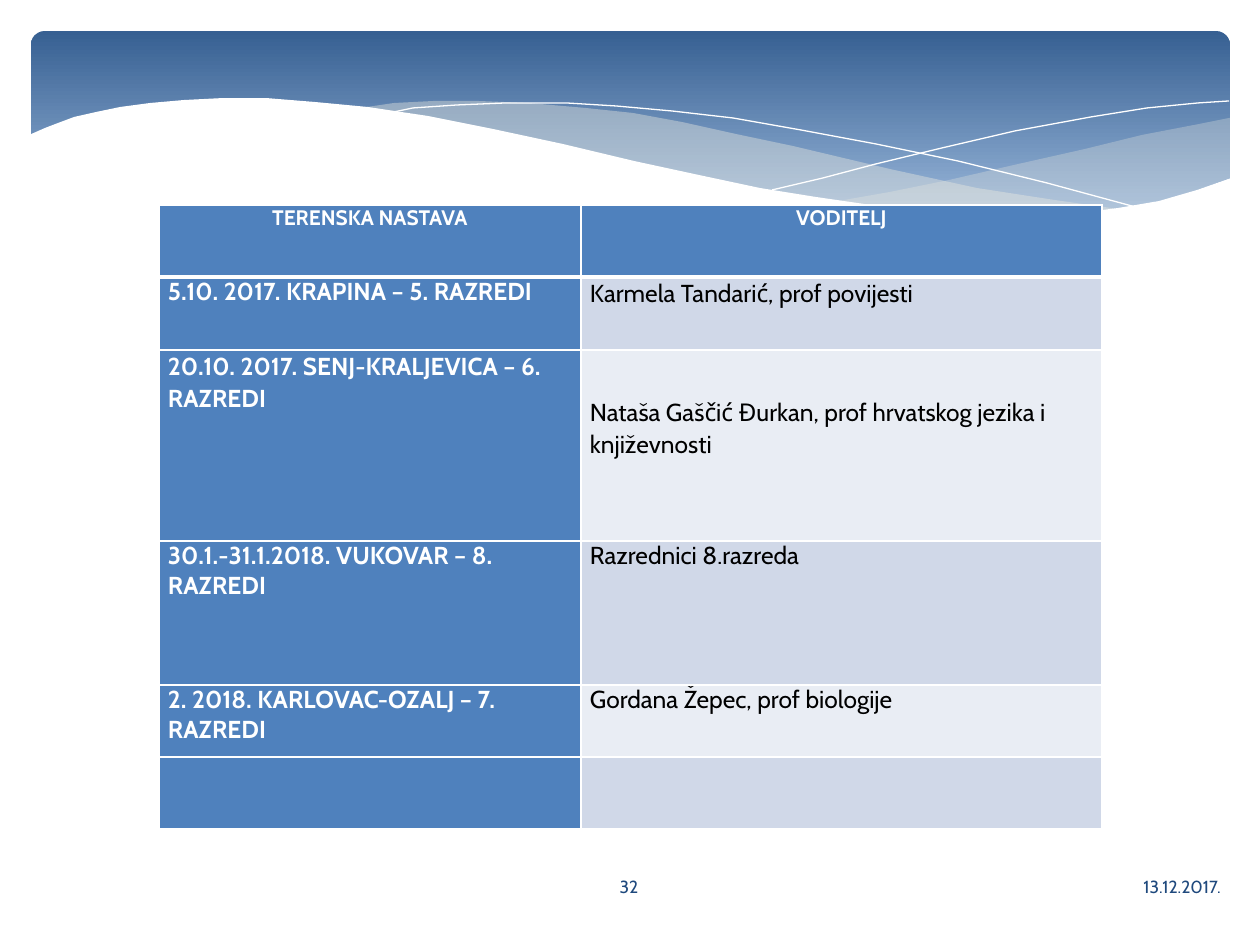
import pptx
import pptx.util
import pptx.dml.color
import pptx.enum.shapes
import pptx.enum.text
import pptx.oxml
import pptx.oxml.ns
import lxml.etree

PX = 914400 / 126
ALIGN = pptx.enum.text.PP_ALIGN
COLORS = {
    "banner_top": "376092", "banner_bottom": "95B3D7", "veil": "EEECE1",
    "white": "FFFFFF", "footer": "1F497D", "blue": "4F81BD",
    "band_dark": "D0D8E8", "band_light": "E9EDF4", "black": "000000",
}


def px(n):
    return pptx.util.Emu(round(n * PX))


def rgb(name):
    return pptx.dml.color.RGBColor.from_string(COLORS[name])


prs = pptx.Presentation()
prs.slide_width, prs.slide_height = px(1260), px(945)
s = prs.slides.add_slide(prs.slide_layouts[6])

banner = s.shapes.add_shape(
    pptx.enum.shapes.MSO_SHAPE.ROUNDED_RECTANGLE, px(31), px(31), px(1199), px(197))
banner.adjustments[0] = 0.07
banner.shadow.inherit = False
banner.line.fill.background()
banner.fill.gradient()
banner.fill.gradient_angle = 270
for stop, name, position in zip(
        banner.fill.gradient_stops, ("banner_top", "banner_bottom"), (0, 0.9)):
    stop.color.rgb = rgb(name)
    stop.position = position

right_veil = [
    (1229, 118), (1194, 125), (1142, 135), (1085, 149), (1014, 165), (949, 180),
    (890, 192), (833, 202), (888, 208), (939, 213), (998, 217), (1052, 217),
    (1099, 213), (1140, 205), (1178, 197), (1230, 178), (1230, 118)]
center_veil = [
    (1125, 210), (1055, 200), (977, 188), (890, 169), (793, 146), (736, 134),
    (682, 122), (633, 113), (586, 108), (529, 103), (479, 101), (433, 101),
    (394, 103), (360, 108), (407, 113), (456, 122), (509, 134), (566, 146),
    (668, 170), (736, 184), (799, 197), (857, 205), (910, 212), (974, 217),
    (1031, 218), (1080, 215)]
falling_line = [
    (389, 113), (413, 108), (457, 105), (505, 103), (567, 103), (616, 106),
    (672, 111), (733, 118), (801, 130), (876, 144), (958, 161), (1047, 183),
    (1143, 209)]
rising_line = [
    (772, 190), (823, 178), (876, 164), (942, 148), (1015, 131), (1091, 117),
    (1147, 108), (1198, 103), (1229, 101)]
white_wave = [
    (1231, 178), (1197, 190), (1159, 201), (1118, 208), (1071, 214), (1019, 215),
    (959, 214), (892, 208), (816, 197), (760, 188), (699, 175), (634, 161),
    (563, 144), (493, 129), (428, 116), (368, 107), (315, 102), (266, 98),
    (223, 98), (184, 100), (150, 103), (120, 107), (96, 112), (74, 117),
    (58, 123), (45, 128), (29, 135), (29, 282), (1231, 282)]

for points, fill, alpha in (
        (right_veil, "veil", 29), (center_veil, "veil", 40),
        (falling_line, None, None), (rising_line, None, None),
        (white_wave, "white", 100)):
    fb = s.shapes.build_freeform(*points[0], scale=PX)
    fb.add_line_segments(points[1:], close=fill is not None)
    sp = fb.convert_to_shape()
    sp.shadow.inherit = False
    if fill:
        sp.line.fill.background()
        sp.fill.solid()
        sp.fill.fore_color.rgb = rgb(fill)
        color = sp.fill._xPr.find(".//" + pptx.oxml.ns.qn("a:srgbClr"))
        lxml.etree.SubElement(color, pptx.oxml.ns.qn("a:alpha"), val=str(alpha * 1000))
    else:
        sp.fill.background()
        sp.line.color.rgb = rgb("white")
        sp.line.width = pptx.util.Pt(0)

for text, left, width, align in (
        ("13.12.2017.", 712, 521, ALIGN.RIGHT), ("32", 549, 160, ALIGN.CENTER)):
    tf = s.shapes.add_textbox(px(left), px(862), px(width), px(50)).text_frame
    tf.word_wrap = True
    tf.vertical_anchor = pptx.enum.text.MSO_ANCHOR.MIDDLE
    tf.text = text
    p = tf.paragraphs[0]
    p.alignment = align
    font = p.runs[0].font
    font.size, font.name = pptx.util.Pt(10), "Cabin"
    font.color.rgb = rgb("footer")

trips = [
    ("TERENSKA NASTAVA", "VODITELJ"),
    ("5.10. 2017. KRAPINA – 5. RAZREDI", "Karmela Tandarić, prof povijesti"),
    ("20.10. 2017. SENJ-KRALJEVICA – 6. RAZREDI",
     "Nataša Gaščić Đurkan, prof hrvatskog jezika i književnosti"),
    ("30.1.-31.1.2018. VUKOVAR – 8. RAZREDI", "Razrednici 8.razreda"),
    ("2. 2018. KARLOVAC-OZALJ – 7. RAZREDI", "Gordana Žepec, prof biologije"),
    ("", ""),
]
col_widths = [422, 521]
row_heights = [72, 73, 191, 144, 72, 72]
loose_cells = [(1, 1), (2, 0), (2, 1)]
table = s.shapes.add_table(
    len(trips), 2, px(159), px(205), px(sum(col_widths)), px(sum(row_heights))).table
for column, width in zip(table.columns, col_widths):
    column.width = px(width)

for i, (row, height) in enumerate(zip(table.rows, row_heights)):
    row.height = px(height)
    for j, cell in enumerate(row.cells):
        cell.margin_left = cell.margin_right = px(9)
        cell.margin_top = px(46) if (i, j) == (2, 1) else 0
        cell.margin_bottom = 0
        tcPr = cell._tc.get_or_add_tcPr()
        for side in "LRTB":
            thick = (i, side) in ((0, "B"), (1, "T"))
            tcPr.append(pptx.oxml.parse_xml(
                f'<a:ln{side} {pptx.oxml.ns.nsdecls("a")} w="{38100 if thick else 12700}">'
                f'<a:solidFill><a:srgbClr val="{COLORS["white"]}"/></a:solidFill></a:ln{side}>'))
        strong = i == 0 or j == 0
        cell.fill.solid()
        cell.fill.fore_color.rgb = rgb(
            "blue" if strong else "band_dark" if i % 2 else "band_light")
        cell.text_frame.text = trips[i][j]
        p = cell.text_frame.paragraphs[0]
        p.alignment = ALIGN.LEFT if i else ALIGN.CENTER
        if (i, j) in loose_cells:
            p.line_spacing = 1.07
            p.space_after = pptx.util.Pt(8)
        for r in p.runs:
            r.font.name = "Cabin"
            r.font.size = pptx.util.Pt(14 if i else 12)
            r.font.bold = strong
            r.font.color.rgb = rgb("white" if strong else "black")

prs.save("out.pptx")
